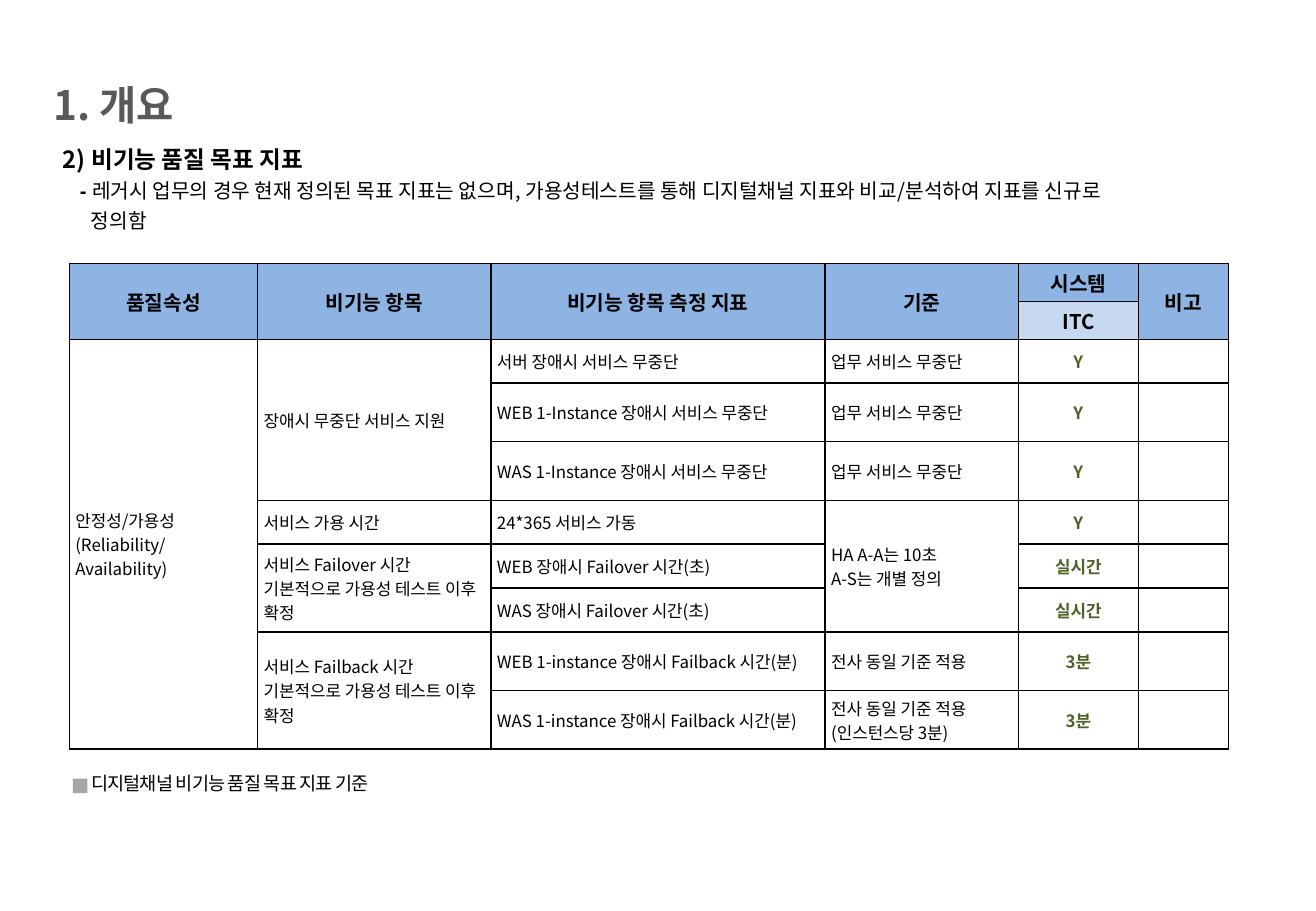
from lxml import etree
from pptx import Presentation
from pptx import util as u
from pptx.dml.color import RGBColor
from pptx.enum import shapes, text
from pptx.oxml.ns import qn

WIDTH, HEIGHT = 10.83, 7.5
KOREAN, LATIN = "Noto Sans CJK KR", "Arial"
COLORS = {
    "title": "595959", "ink": "000000", "dash": "020102", "value": "4F6228",
    "header": "8EB4E3", "system": "C6D9F1", "paper": "FFFFFF", "marker": "A6A6A6",
}
COLUMNS = [1.55, 1.92, 2.75, 1.59, 0.99, 0.74]
SHORT, TALL = 0.36, 0.48
ROWS = [0.31, 0.31, SHORT, TALL, TALL, SHORT, SHORT, SHORT, TALL, TALL]
VALUE_COLUMN = 4
HEADERS = ["품질속성", "비기능 항목", "비기능 항목 측정 지표", "기준", "시스템", "비고"]
LATER = "기본적으로 가용성 테스트 이후 확정"
NONSTOP = "업무 서비스 무중단"
BODY = [
    ["안정성/가용성\n(Reliability/Availability)", "장애시 무중단 서비스 지원",
     "서버 장애시 서비스 무중단", NONSTOP, "Y", ""],
    ["", "", "WEB 1-Instance 장애시 서비스 무중단", NONSTOP, "Y", ""],
    ["", "", "WAS 1-Instance 장애시 서비스 무중단", NONSTOP, "Y", ""],
    ["", "서비스 가용 시간", "24*365 서비스 가동", "HA A-A는 10초\nA-S는 개별 정의", "Y", ""],
    ["", "서비스 Failover 시간\n" + LATER, "WEB 장애시 Failover 시간(초)", "", "실시간", ""],
    ["", "", "WAS 장애시 Failover 시간(초)", "", "실시간", ""],
    ["", "서비스 Failback 시간\n" + LATER, "WEB 1-instance 장애시 Failback 시간(분)",
     "전사 동일 기준 적용", "3분", ""],
    ["", "", "WAS 1-instance 장애시 Failback 시간(분)",
     "전사 동일 기준 적용\n(인스턴스당 3분)", "3분", ""],
]
MERGES = [(0, c, 1) for c in (0, 1, 2, 3, 5)] + [
    (2, 0, 9), (2, 1, 4), (6, 1, 7), (8, 1, 9), (5, 3, 7)]


def rgb(name):
    """Return the named colour."""
    return RGBColor.from_string(COLORS[name])


def inches(box):
    """Turn a box given in inches into lengths."""
    return [u.Inches(value) for value in box]


def add_span(para, words, size, color="ink", bold=False, font=KOREAN):
    """Add one formatted run to a paragraph."""
    span = para.add_run()
    span.text = words
    span.font.name, span.font.size, span.font.bold = font, u.Pt(size), bold
    span.font.color.rgb = rgb(color)
    latin = span.font._element.find(qn("a:latin"))
    east = etree.Element(qn("a:ea"), typeface=KOREAN)
    latin.addnext(east)
    return span


def add_title(page, box):
    """Place the title placeholder."""
    title = page.shapes.title
    title.left, title.top, title.width, title.height = inches(box)
    frame = title.text_frame
    frame.vertical_anchor = text.MSO_ANCHOR.BOTTOM
    para = frame.paragraphs[0]
    para.alignment = text.PP_ALIGN.LEFT
    add_span(para, "1. 개요", 24, "title", True)


def add_intro(page, box):
    """Write the section heading and its remark."""
    frame = page.shapes.add_textbox(*inches(box)).text_frame
    frame.word_wrap = True
    lines = [
        (0.04, [("2) 비기능 품질 목표 지표", 14, "ink", True)]),
        (0.18, [("- ", 12, "dash", True, LATIN),
                ("레거시 업무의 경우 현재 정의된 목표 지표는 없으며, 가용성테스트를 통해 "
                 "디지털채널 지표와 비교/분석하여 지표를 신규로", 12)]),
        (0.27, [("정의함", 12)]),
    ]
    for number, (margin, spans) in enumerate(lines):
        para = frame.add_paragraph() if number else frame.paragraphs[0]
        para.line_spacing = 1.23
        para._p.get_or_add_pPr().set("marL", str(u.Inches(margin)))
        for span in spans:
            add_span(para, *span)


def format_cell(cell, fill):
    """Set a cell's margins, borders and fill."""
    cell.margin_left = cell.margin_right = u.Inches(0.05)
    cell.margin_top = cell.margin_bottom = u.Inches(0.03)
    cell.vertical_anchor = text.MSO_ANCHOR.MIDDLE
    for side in ("lnL", "lnR", "lnT", "lnB"):
        line = etree.SubElement(cell._tc.get_or_add_tcPr(), qn("a:" + side), w=str(u.Pt(1)))
        paint = etree.SubElement(line, qn("a:solidFill"))
        etree.SubElement(paint, qn("a:srgbClr"), val=COLORS["ink"])
    cell.fill.solid()
    cell.fill.fore_color.rgb = rgb(fill)


def fill_cell(cell, words, size, color, bold, centred, font):
    """Write a cell's lines, or keep an empty cell small."""
    if not words:
        etree.SubElement(cell.text_frame.paragraphs[0]._p, qn("a:endParaRPr"), sz=str(size * 100))
        return
    for number, line in enumerate(words.split("\n")):
        para = cell.text_frame.add_paragraph() if number else cell.text_frame.paragraphs[0]
        para.alignment = text.PP_ALIGN.CENTER if centred else text.PP_ALIGN.LEFT
        add_span(para, line, size, color, bold, font)


def add_targets(page, box):
    """Build the table of quality targets."""
    table = page.shapes.add_table(len(ROWS), len(COLUMNS), *inches(box)).table
    for column, share in zip(table.columns, COLUMNS):
        column.width = u.Inches(box[2] * share / sum(COLUMNS))
    for row, share in zip(table.rows, ROWS):
        row.height = u.Inches(box[3] * share / sum(ROWS))
    subheaders = ["ITC" if c == VALUE_COLUMN else "" for c in range(len(COLUMNS))]
    for r, row in enumerate([HEADERS, subheaders] + BODY):
        for c, words in enumerate(row):
            head, value = r < 2, c == VALUE_COLUMN
            fill = "system" if r == 1 and value else "header" if head else "paper"
            color = "value" if value and not head else "ink"
            font = LATIN if r == 0 and value else KOREAN
            cell = table.cell(r, c)
            format_cell(cell, fill)
            fill_cell(cell, words, 12 if head else 10, color, head or value, head or value, font)
    for top, column, bottom in MERGES:
        table.cell(top, column).merge(table.cell(bottom, column))


def add_caption(page, box):
    """Place the square marker and the caption beside it."""
    left, top, width, height = box
    frame = page.shapes.add_textbox(*inches((left + 0.15, top, width - 0.15, height))).text_frame
    frame.word_wrap = True
    frame.margin_left = frame.margin_right = frame.margin_top = frame.margin_bottom = 0
    para = frame.paragraphs[0]
    para.line_spacing = 1.15
    span = add_span(para, "디지털채널 비기능 품질 목표 지표 기준", 11)
    span.font._element.set("spc", "-50")
    marker = page.shapes.add_shape(
        shapes.MSO_SHAPE.RECTANGLE, *inches((left, top + 0.08, 0.12, 0.12)))
    marker.shadow.inherit = False
    marker.fill.solid()
    marker.fill.fore_color.rgb = rgb("marker")
    marker.line.fill.background()


def main():
    """Build and save the deck."""
    deck = Presentation()
    deck.slide_width, deck.slide_height = inches((WIDTH, HEIGHT))
    page = deck.slides.add_slide(deck.slide_layouts[5])
    add_title(page, (0.34, 0.28, 8.06, 0.83))
    add_intro(page, (0.38, 1.09, 10.24, 1.06))
    add_targets(page, (0.57, 2.17, sum(COLUMNS), 4))
    add_caption(page, (0.6, 6.33, 5.42, 0.27))
    deck.save("out.pptx")


if __name__ == "__main__":
    main()
